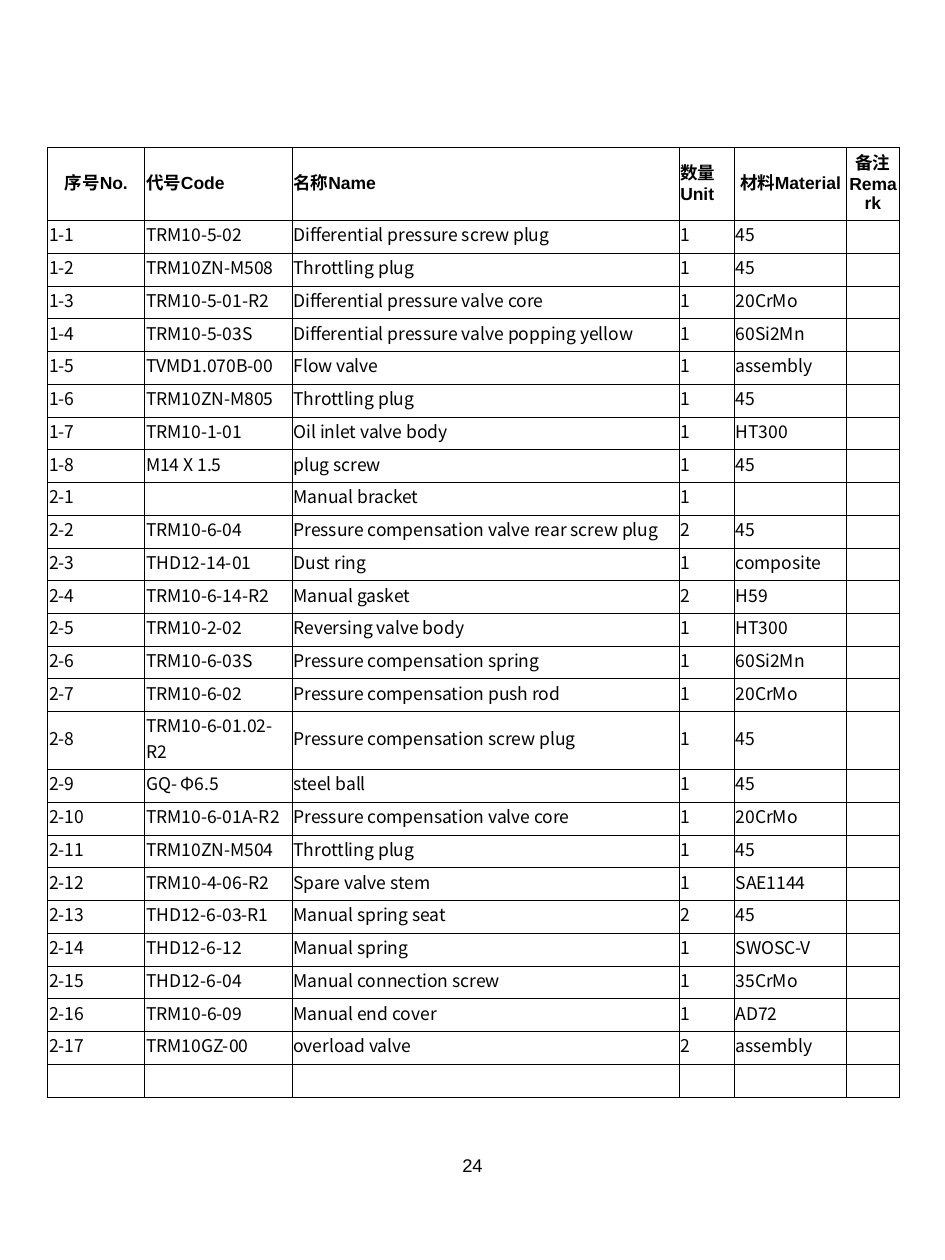
from pptx import Presentation
from pptx.dml.color import RGBColor
from pptx.enum.text import MSO_ANCHOR, PP_ALIGN
from pptx.oxml import parse_xml
from pptx.oxml.ns import nsdecls
from pptx.util import Inches, Pt

BLACK = RGBColor(0, 0, 0)
WHITE = RGBColor(255, 255, 255)
LATIN, CJK = "Arial", "Noto Sans CJK SC"
PAGE_WIDTH, PAGE_HEIGHT = 7.5, 10

HEADINGS = ["序号No.", "代号Code", "名称Name", "数量Unit", "材料Material", "备注Remark"]
CENTRED_HEADINGS = {0, 4, 5}
COLUMN_WIDTHS = [0.77, 1.17, 3.07, 0.44, 0.89, 0.42]
PARTS = [
    ("1-1", "TRM10-5-02", "Differential pressure screw plug", "1", "45"),
    ("1-2", "TRM10ZN-M508", "Throttling plug", "1", "45"),
    ("1-3", "TRM10-5-01-R2", "Differential pressure valve core", "1", "20CrMo"),
    ("1-4", "TRM10-5-03S", "Differential pressure valve popping yellow", "1", "60Si2Mn"),
    ("1-5", "TVMD1.070B-00", "Flow valve", "1", "assembly"),
    ("1-6", "TRM10ZN-M805", "Throttling plug", "1", "45"),
    ("1-7", "TRM10-1-01", "Oil inlet valve body", "1", "HT300"),
    ("1-8", "M14 X 1.5", "plug screw", "1", "45"),
    ("2-1", "", "Manual bracket", "1", ""),
    ("2-2", "TRM10-6-04", "Pressure compensation valve rear screw plug", "2", "45"),
    ("2-3", "THD12-14-01", "Dust ring", "1", "composite"),
    ("2-4", "TRM10-6-14-R2", "Manual gasket", "2", "H59"),
    ("2-5", "TRM10-2-02", "Reversing valve body", "1", "HT300"),
    ("2-6", "TRM10-6-03S", "Pressure compensation spring", "1", "60Si2Mn"),
    ("2-7", "TRM10-6-02", "Pressure compensation push rod", "1", "20CrMo"),
    ("2-8", "TRM10-6-01.02-R2", "Pressure compensation screw plug", "1", "45"),
    ("2-9", "GQ- Φ6.5", "steel ball", "1", "45"),
    ("2-10", "TRM10-6-01A-R2", "Pressure compensation valve core", "1", "20CrMo"),
    ("2-11", "TRM10ZN-M504", "Throttling plug", "1", "45"),
    ("2-12", "TRM10-4-06-R2", "Spare valve stem", "1", "SAE1144"),
    ("2-13", "THD12-6-03-R1", "Manual spring seat", "2", "45"),
    ("2-14", "THD12-6-12", "Manual spring", "1", "SWOSC-V"),
    ("2-15", "THD12-6-04", "Manual connection screw", "1", "35CrMo"),
    ("2-16", "TRM10-6-09", "Manual end cover", "1", "AD72"),
    ("2-17", "TRM10GZ-00", "overload valve", "2", "assembly"),
    ("", "", "", "", ""),
]
PAGE_NUMBER = "24"

HEADING_HEIGHT, PART_HEIGHT, WRAPPED_HEIGHT = 0.58, 0.26, 0.46
WRAPPED_PART = "2-8"
CELL_FORMAT = {
    "vertical_anchor": MSO_ANCHOR.MIDDLE,
    "margin_left": Inches(0.01),
    "margin_top": Inches(0.01),
    "margin_right": Inches(0.01),
    "margin_bottom": Inches(0.05),
}
HEADING_FONT = {"name": LATIN, "size": Pt(10), "bold": True}
PART_FONT = {"name": CJK, "size": Pt(10), "bold": False}
NUMBER_FONT = {"name": LATIN, "size": Pt(10.5)}


def apply(target, formats):
    """Set each named attribute on the target."""
    for name, value in formats.items():
        setattr(target, name, value)


def write(paragraph, text, font, align):
    """Put formatted text in a paragraph, or only its size when empty."""
    paragraph.alignment = align
    if not text:
        paragraph._p.get_or_add_endParaRPr().set("sz", str(int(font["size"].pt * 100)))
        return
    run = paragraph.add_run()
    run.text = text
    apply(run.font, font)
    run.font.color.rgb = BLACK
    run.font._element.append(parse_xml(f'<a:ea {nsdecls("a")} typeface="{CJK}"/>'))


def add_borders(cell):
    """Draw a thin black line on all four sides of a cell."""
    for side in ("lnL", "lnR", "lnT", "lnB"):
        cell._tc.get_or_add_tcPr().append(parse_xml(
            f'<a:{side} {nsdecls("a")} w="{Pt(0.5)}"><a:solidFill>'
            f'<a:srgbClr val="{BLACK}"/></a:solidFill></a:{side}>'))


def add_parts_list(slide):
    """Add the parts table with its heading row."""
    heights = [HEADING_HEIGHT] + [
        WRAPPED_HEIGHT if part[0] == WRAPPED_PART else PART_HEIGHT for part in PARTS]
    parts_list = slide.shapes.add_table(
        len(heights), len(COLUMN_WIDTHS), Inches(0.38), Inches(1.17),
        Inches(sum(COLUMN_WIDTHS)), Inches(sum(heights))).table
    apply(parts_list, {"first_row": False, "horz_banding": False})
    for column, width in zip(parts_list.columns, COLUMN_WIDTHS):
        column.width = Inches(width)
    for row, height in zip(parts_list.rows, heights):
        row.height = Inches(height)
    for r, entries in enumerate([HEADINGS] + [(*part, "") for part in PARTS]):
        for c, entry in enumerate(entries):
            cell = parts_list.cell(r, c)
            apply(cell, CELL_FORMAT)
            add_borders(cell)
            cell.fill.solid()
            cell.fill.fore_color.rgb = WHITE
            centred = r == 0 and c in CENTRED_HEADINGS
            write(cell.text_frame.paragraphs[0], entry,
                  PART_FONT if r else HEADING_FONT,
                  PP_ALIGN.CENTER if centred else PP_ALIGN.LEFT)


def add_page_number(slide):
    """Centre the page number at the foot of the slide."""
    width = 2.38
    number = slide.shapes.add_textbox(
        Inches((PAGE_WIDTH - width) / 2), Inches(9.11), Inches(width), Inches(0.69))
    number.text_frame.word_wrap = True
    write(number.text_frame.paragraphs[0], PAGE_NUMBER, NUMBER_FONT, PP_ALIGN.CENTER)


def main():
    """Build the parts list slide."""
    deck = Presentation()
    apply(deck, {"slide_width": Inches(PAGE_WIDTH), "slide_height": Inches(PAGE_HEIGHT)})
    slide = deck.slides.add_slide(deck.slide_layouts[6])
    add_page_number(slide)
    add_parts_list(slide)
    deck.save("out.pptx")


if __name__ == "__main__":
    main()
